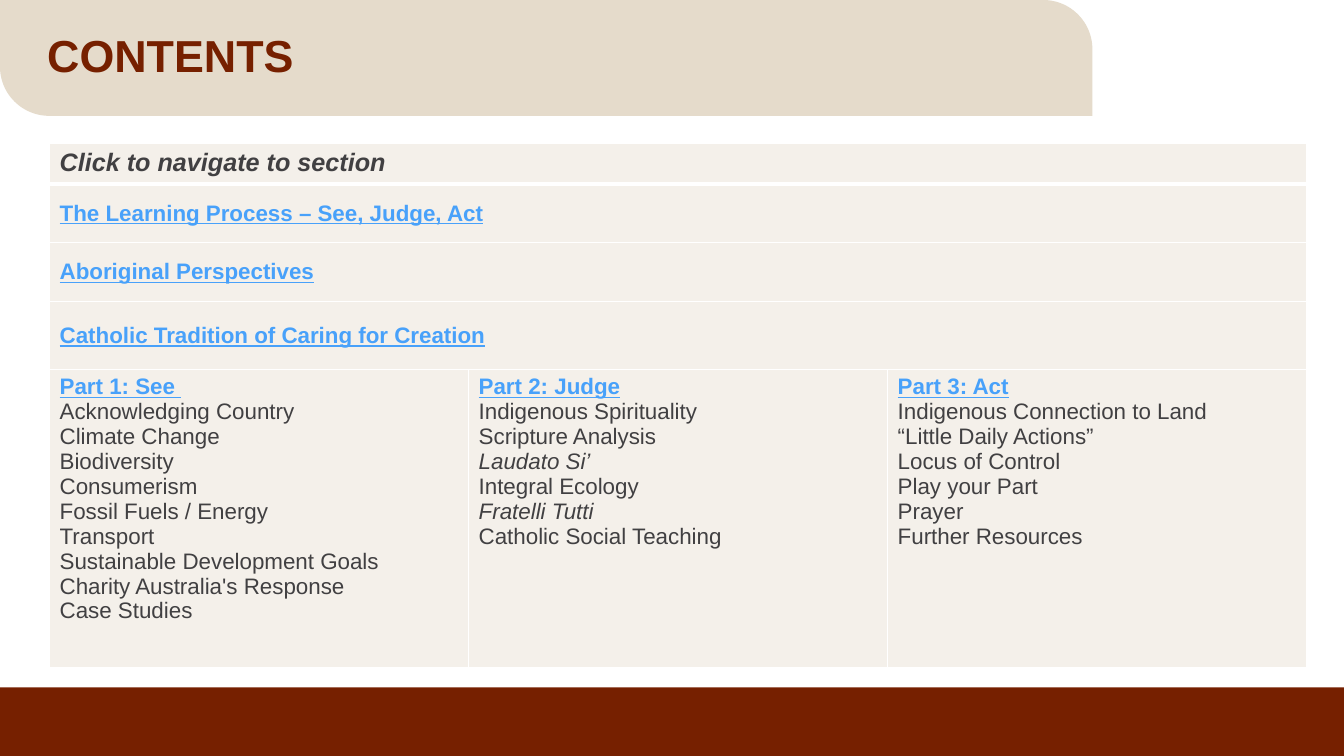
from dataclasses import dataclass

from lxml.etree import SubElement
from pptx import Presentation
from pptx.dml.color import RGBColor
from pptx.enum.shapes import MSO_SHAPE as Shape
from pptx.enum.text import MSO_ANCHOR as Anchor
from pptx.oxml.ns import qn
from pptx.slide import Slide
from pptx.table import _Cell as Cell
from pptx.util import Cm, Pt

COLORS = {
    "brown": "762000",
    "sand": "E5DBCB",
    "text": "414042",
    "link": "48A1FA",
    "border": "FFFFFF",
}
FONT = "Arial"
SLIDE_WIDTH, SLIDE_HEIGHT = 33.87, 19.05
BANNER_WIDTH, BANNER_HEIGHT = 27.53, 2.92
FOOTER_TOP = 17.32
TABLE_LEFT, TABLE_TOP = 1.25, 3.62
COLUMN_WIDTH = 10.56
ROW_HEIGHTS = (0.99, 1.48, 1.48, 1.72, 7.5)
SAND_OPACITY = 40


@dataclass(frozen=True)
class Style:
    size: int
    color: str
    bold: bool = False
    italic: bool = False
    underline: bool = False


@dataclass(frozen=True)
class Run:
    text: str
    style: Style


TITLE = Style(32, "brown", bold=True)
HINT = Style(18, "text", bold=True, italic=True)
LINK = Style(16, "link", bold=True, underline=True)
LINK_END = Style(16, "link", underline=True)
TOPIC = Style(16, "text")
WORK = Style(16, "text", italic=True)

Lines = list[list[Run]]

SECTIONS = (
    Run("Click to navigate to section", HINT),
    Run("The Learning Process – See, Judge, Act", LINK),
    Run("Aboriginal Perspectives", LINK),
    Run("Catholic Tradition of Caring for Creation", LINK),
)


@dataclass(frozen=True)
class Part:
    heading: list[Run]
    topics: tuple[str, ...]
    works: tuple[str, ...] = ()

    def lines(self) -> Lines:
        """Heading first, then one line per topic; titles of works in italics."""
        return [self.heading] + [
            [Run(topic, WORK if topic in self.works else TOPIC)] for topic in self.topics
        ]


PARTS = (
    Part(
        [Run("Part 1: See", LINK), Run(" ", LINK_END)],
        (
            "Acknowledging Country",
            "Climate Change",
            "Biodiversity",
            "Consumerism",
            "Fossil Fuels / Energy",
            "Transport",
            "Sustainable Development Goals",
            "Charity Australia's Response",
            "Case Studies",
        ),
    ),
    Part(
        [Run("Part 2: Judge", LINK)],
        (
            "Indigenous Spirituality",
            "Scripture Analysis",
            "Laudato Si’",
            "Integral Ecology",
            "Fratelli Tutti",
            "Catholic Social Teaching",
        ),
        works=("Laudato Si’", "Fratelli Tutti"),
    ),
    Part(
        [Run("Part 3: Act", LINK)],
        (
            "Indigenous Connection to Land",
            "“Little Daily Actions”",
            "Locus of Control",
            "Play your Part",
            "Prayer",
            "Further Resources",
        ),
    ),
)


def color(name: str) -> RGBColor:
    return RGBColor.from_string(COLORS[name])


def write_lines(frame, lines: Lines) -> None:
    for index, runs in enumerate(lines):
        paragraph = frame.add_paragraph() if index else frame.paragraphs[0]
        for item in runs:
            run = paragraph.add_run()
            run.text = item.text
            font = run.font
            font.name = FONT
            font.size = Pt(item.style.size)
            font.bold = item.style.bold
            font.italic = item.style.italic
            font.underline = item.style.underline
            font.color.rgb = color(item.style.color)


def add_block(slide: Slide, kind: Shape, top: float, width: float, height: float, fill: str):
    """Add a plain filled shape that starts at the left edge of the slide."""
    shape = slide.shapes.add_shape(kind, 0, Cm(top), Cm(width), Cm(height))
    shape.shadow.inherit = False
    shape.fill.solid()
    shape.fill.fore_color.rgb = color(fill)
    shape.line.fill.background()
    return shape


def add_title(slide: Slide) -> None:
    box = slide.shapes.add_textbox(Cm(0.94), Cm(0.36), Cm(25), Cm(2.2))
    frame = box.text_frame
    frame.word_wrap = True
    frame.vertical_anchor = Anchor.MIDDLE
    write_lines(frame, [[Run("CONTENTS", TITLE)]])
    frame.paragraphs[0].line_spacing = 0.9


def style_cell(cell: Cell, row: int) -> None:
    """Give the cell white borders, thick below the first row, and a see-through fill."""
    properties = cell._tc.get_or_add_tcPr()
    widths = {"lnL": 1, "lnR": 1, "lnT": 3 if row == 1 else 1, "lnB": 3 if row == 0 else 1}
    for side, width in widths.items():
        line = SubElement(properties, qn(f"a:{side}"), w=str(Pt(width)))
        solid = SubElement(line, qn("a:solidFill"))
        SubElement(solid, qn("a:srgbClr"), val=COLORS["border"])
    cell.fill.solid()
    cell.fill.fore_color.rgb = color("sand")
    sand = properties.find(qn("a:solidFill")).find(qn("a:srgbClr"))
    SubElement(sand, qn("a:alpha"), val=str(SAND_OPACITY * 1000))


def add_contents_table(slide: Slide) -> None:
    columns = len(PARTS)
    table = slide.shapes.add_table(
        len(ROW_HEIGHTS), columns, Cm(TABLE_LEFT), Cm(TABLE_TOP),
        Cm(COLUMN_WIDTH * columns), Cm(sum(ROW_HEIGHTS)),
    ).table
    for column in table.columns:
        column.width = Cm(COLUMN_WIDTH)
    for row, height in enumerate(ROW_HEIGHTS):
        table.rows[row].height = Cm(height)
        for column in range(columns):
            style_cell(table.cell(row, column), row)
    for row, section in enumerate(SECTIONS):
        cell = table.cell(row, 0)
        cell.merge(table.cell(row, columns - 1))
        cell.vertical_anchor = Anchor.MIDDLE if row else Anchor.TOP
        write_lines(cell.text_frame, [[section]])
    for column, part in enumerate(PARTS):
        write_lines(table.cell(len(SECTIONS), column).text_frame, part.lines())


def main() -> None:
    presentation = Presentation()
    presentation.slide_width = Cm(SLIDE_WIDTH)
    presentation.slide_height = Cm(SLIDE_HEIGHT)
    slide = presentation.slides.add_slide(presentation.slide_layouts[6])
    add_block(slide, Shape.RECTANGLE, FOOTER_TOP, SLIDE_WIDTH, SLIDE_HEIGHT - FOOTER_TOP, "brown")
    banner = add_block(slide, Shape.ROUND_2_DIAG_RECTANGLE, 0, BANNER_WIDTH, BANNER_HEIGHT, "sand")
    banner.adjustments[0], banner.adjustments[1] = 0, 0.425
    add_title(slide)
    add_contents_table(slide)
    presentation.save("out.pptx")


if __name__ == "__main__":
    main()
